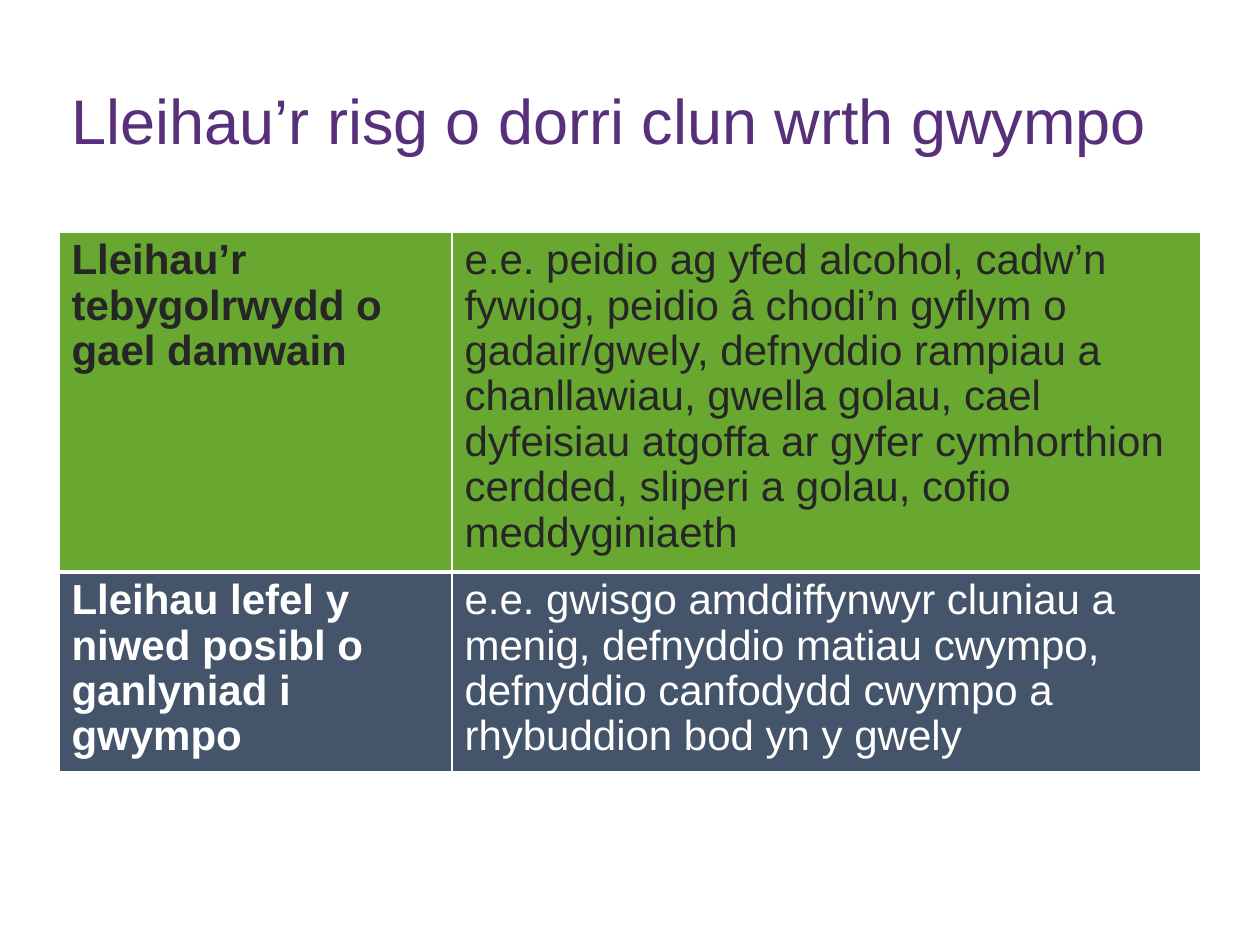
import pptx
import pptx.dml.color
import pptx.enum.text
import pptx.oxml.ns
import pptx.util
from lxml import etree

EMU_PER_PX = 914400 // 126
FONT = "Arial"
PURPLE = pptx.dml.color.RGBColor(0x58, 0x2F, 0x7A)
GREEN = pptx.dml.color.RGBColor(0x69, 0xA8, 0x30)
SLATE = pptx.dml.color.RGBColor(0x44, 0x54, 0x6A)
DARK = pptx.dml.color.RGBColor(0x26, 0x26, 0x26)
WHITE = pptx.dml.color.RGBColor(0xFF, 0xFF, 0xFF)

COLUMN_WIDTHS = (393, 749)
ROWS = [
    {
        "height": 340,
        "fill": GREEN,
        "color": DARK,
        "borders": {"L": 1, "R": 1, "T": 1, "B": 3},
        "texts": (
            "Lleihau’r tebygolrwydd o gael damwain",
            "e.e. peidio ag yfed alcohol, cadw’n fywiog, peidio â chodi’n gyflym o "
            "gadair/gwely, defnyddio rampiau a chanllawiau, gwella golau, cael "
            "dyfeisiau atgoffa ar gyfer cymhorthion cerdded, sliperi a golau, cofio "
            "meddyginiaeth",
        ),
    },
    {
        "height": 200,
        "fill": SLATE,
        "color": WHITE,
        "borders": {"L": 1, "R": 1, "T": 3, "B": 1},
        "texts": (
            "Lleihau lefel y niwed posibl o ganlyniad i gwympo",
            "e.e. gwisgo amddiffynwyr cluniau a menig, defnyddio matiau cwympo, "
            "defnyddio canfodydd cwympo a rhybuddion bod yn y gwely",
        ),
    },
]


def px(length):
    return pptx.util.Emu(length * EMU_PER_PX)


def write_text(frame, text, *, size, color, bold=False, line_spacing=1.0):
    para = frame.paragraphs[0]
    para.alignment = pptx.enum.text.PP_ALIGN.LEFT
    para.line_spacing = line_spacing
    span = para.add_run()
    span.text = text
    span.font.name = FONT
    span.font.size = pptx.util.Pt(size)
    span.font.bold = bold
    span.font.color.rgb = color


def add_borders(cell, widths, color):
    properties = cell._tc.get_or_add_tcPr()
    qualify = pptx.oxml.ns.qn
    for side, width in widths.items():
        line = etree.SubElement(properties, qualify(f"a:ln{side}"), w=str(pptx.util.Pt(width)))
        fill = etree.SubElement(line, qualify("a:solidFill"))
        etree.SubElement(fill, qualify("a:srgbClr"), val=str(color))


class SlideBuilder:
    def __init__(self, page):
        self.page = page
        self.title_size = 36
        self.table_size = 24
        self.table_spacing = 0.97

    def title(self, text, left, top, width, height):
        box = self.page.shapes.title
        box.left, box.top, box.width, box.height = map(px, (left, top, width, height))
        frame = box.text_frame
        frame.word_wrap = True
        frame.auto_size = pptx.enum.text.MSO_AUTO_SIZE.NONE
        frame.vertical_anchor = pptx.enum.text.MSO_ANCHOR.MIDDLE
        write_text(frame, text, size=self.title_size, color=PURPLE)

    def table(self, rows, widths, left, top):
        height = sum(row["height"] for row in rows)
        shape = self.page.shapes.add_table(
            len(rows), len(widths), px(left), px(top), px(sum(widths)), px(height)
        )
        table = shape.table
        table.horz_banding = False
        table.first_row = False
        for column, width in zip(table.columns, widths):
            column.width = px(width)
        for row_index, row in enumerate(rows):
            table.rows[row_index].height = px(row["height"])
            for column_index, text in enumerate(row["texts"]):
                cell = table.cell(row_index, column_index)
                add_borders(cell, row["borders"], WHITE)
                cell.fill.solid()
                cell.fill.fore_color.rgb = row["fill"]
                write_text(
                    cell.text_frame,
                    text,
                    size=self.table_size,
                    color=row["color"],
                    bold=column_index == 0,
                    line_spacing=self.table_spacing,
                )


def main():
    deck = pptx.Presentation()
    deck.slide_width = px(1260)
    deck.slide_height = px(945)
    page = deck.slides.add_slide(deck.slide_layouts[5])
    builder = SlideBuilder(page)
    builder.title("Lleihau’r risg o dorri clun wrth gwympo", 59, 50, 1142, 139)
    builder.table(ROWS, COLUMN_WIDTHS, 59, 232)
    deck.save("out.pptx")


if __name__ == "__main__":
    main()
